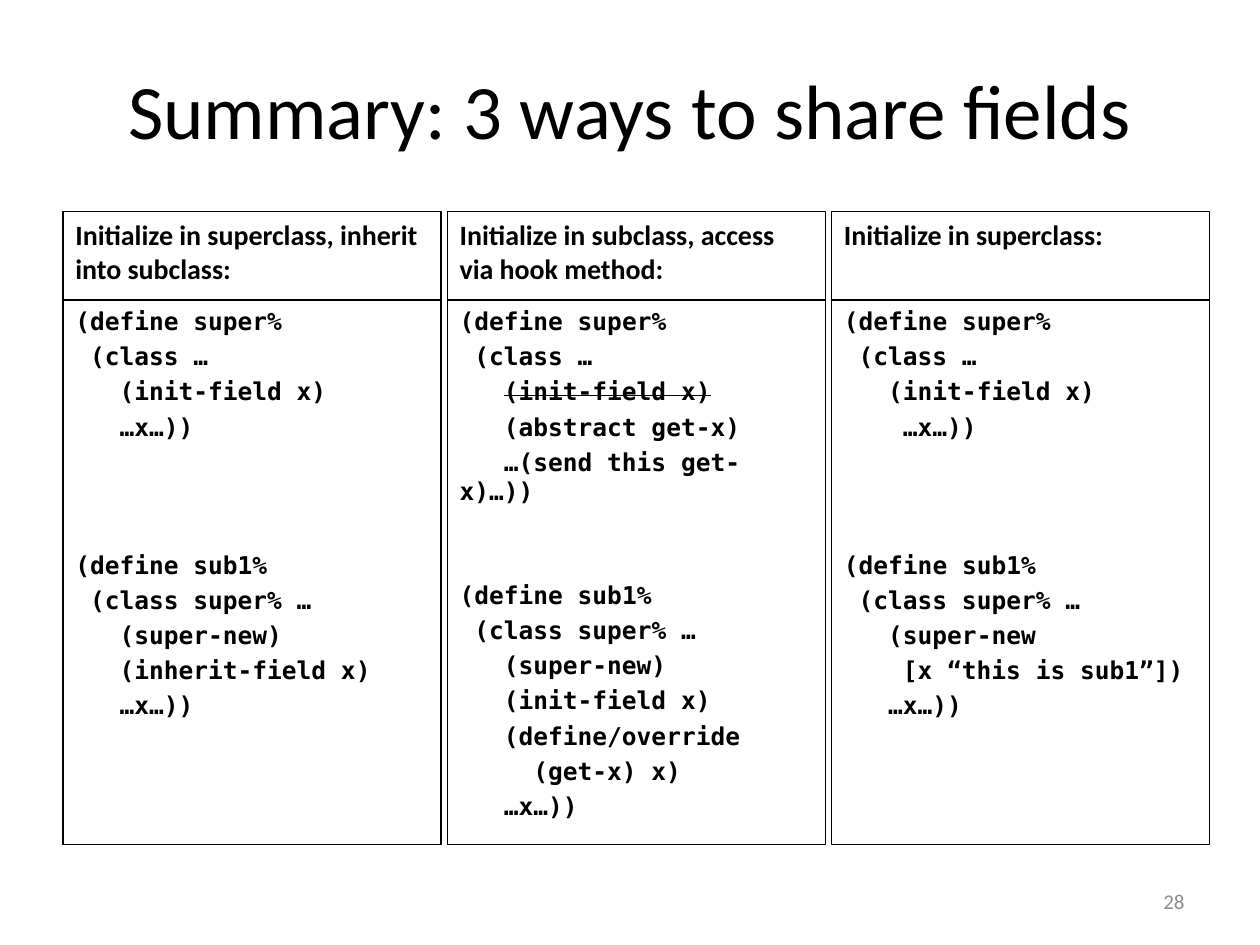
from pptx import Presentation
from pptx.dml.color import RGBColor
from pptx.enum.shapes import MSO_SHAPE
from pptx.enum.text import MSO_ANCHOR, PP_ALIGN
from pptx.util import Inches, Pt

COLORS = {"ink": "000000", "number": "8C8C8C"}
SANS, MONO = "Calibri", "DejaVu Sans Mono"
CODE_SIZE = 14
CHAR_WIDTH = 0.602 * CODE_SIZE / 72  # one monospaced character, in inches
LINE_GAP, LINE_PITCH = 3.3, 19.6     # points

# Each column: heading, blank lines between the two classes, superclass, subclass.
# A code line is (indent in characters, text); "~" marks a struck-out line.
SUPER_HEAD = [(0, "(define super%"), (1, "(class …")]
SUB_HEAD = [(0, "(define sub1%"), (1, "(class super% …")]
COLUMNS = [
    ("Initialize in superclass, inherit into subclass:", 3,
     [(3, "(init-field x)"), (3, "…x…))")],
     [(3, "(super-new)"), (3, "(inherit-field x)"), (3, "…x…))")]),
    ("Initialize in subclass, access via hook method:", 2,
     [(3, "~(init-field x)"), (3, "(abstract get-x)"),
      (3, "…(send this get-x)…))")],
     [(3, "(super-new)"), (3, "(init-field x)"), (3, "(define/override"),
      (5, "(get-x) x)"), (3, "…x…))")]),
    ("Initialize in superclass:", 3,
     [(3, "(init-field x)"), (4, "…x…))")],
     [(3, "(super-new"), (4, "[x “this is sub1”])"), (3, "…x…))")]),
]


def write(p, text, size=CODE_SIZE, font=SANS, color="ink", bold=False,
          strike=False, align=PP_ALIGN.LEFT, before=0, indent=0):
    p.alignment = align
    p.space_before = Pt(before)
    if indent:  # first line only, so wrapped text returns to the margin
        pPr = p._p.get_or_add_pPr()
        pPr.set("marL", "0")
        pPr.set("indent", str(Inches(indent)))
    r = p.add_run()
    r.text = text
    r.font.size = Pt(size)
    r.font.name = font
    r.font.bold = bold
    r.font.color.rgb = RGBColor.from_string(COLORS[color])
    if strike:
        r._r.get_or_add_rPr().set("strike", "sngStrike")


def add_label(s, box, text, **fmt):
    tf = s.shapes.add_textbox(*map(Inches, box)).text_frame
    tf.word_wrap = True
    tf.vertical_anchor = MSO_ANCHOR.MIDDLE
    write(tf.paragraphs[0], text, **fmt)


def add_frame(s, box):
    sp = s.shapes.add_shape(MSO_SHAPE.RECTANGLE, *map(Inches, box))
    sp.shadow.inherit = False
    sp.fill.background()
    sp.line.color.rgb = RGBColor.from_string(COLORS["ink"])
    sp.line.width = Pt(0.75)
    tf = sp.text_frame
    tf.word_wrap = True
    tf.vertical_anchor = MSO_ANCHOR.TOP
    return tf


def add_column(s, box, heading, blanks, super_body, sub_body):
    left, top, width, height = box
    head_h = 0.7

    # Heading cell
    tf = add_frame(s, (left, top, width, head_h))
    write(tf.paragraphs[0], heading, size=16, bold=True)

    # Code cell
    tf = add_frame(s, (left, top + head_h, width, height - head_h))
    superclass = SUPER_HEAD + super_body
    for i, (chars, text) in enumerate(superclass + SUB_HEAD + sub_body):
        p = tf.add_paragraph() if i else tf.paragraphs[0]
        before = LINE_GAP if i else 0
        if i == len(superclass):
            before += blanks * LINE_PITCH
        write(p, text.lstrip("~"), font=MONO, bold=True, before=before,
              strike=text.startswith("~"), indent=chars * CHAR_WIDTH)


def add_columns(s, box, gap=0.05):
    left, top, width, height = box
    n = len(COLUMNS)
    col_w = (width - gap * (n - 1)) / n
    for i, column in enumerate(COLUMNS):
        add_column(s, (left + i * (col_w + gap), top, col_w, height), *column)


def main():
    prs = Presentation()
    prs.slide_width, prs.slide_height = Inches(10), Inches(7.5)
    s = prs.slides.add_slide(prs.slide_layouts[6])

    # Title, three columns, slide number
    add_label(s, (0.5, 0.24, 9, 1.25), "Summary: 3 ways to share fields",
              size=44, align=PP_ALIGN.CENTER)
    add_columns(s, (0.5, 1.68, 9.1, 5.02))
    add_label(s, (7.17, 6.95, 2.33, 0.4), "28", size=12, color="number",
              align=PP_ALIGN.RIGHT)

    prs.save("out.pptx")


if __name__ == "__main__":
    main()
